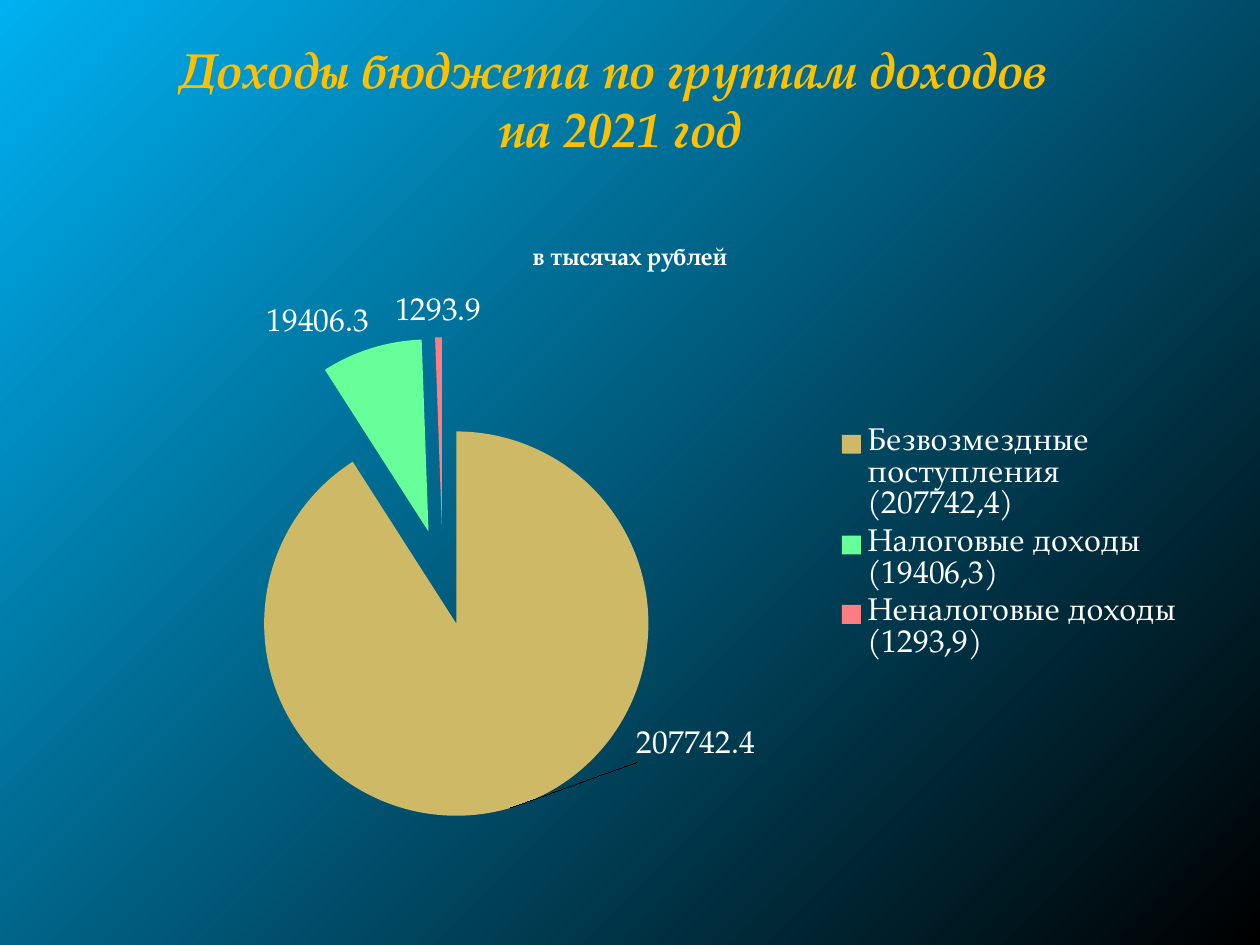
from lxml import etree
from pptx import Presentation
from pptx.chart.data import CategoryChartData
from pptx.dml.color import RGBColor
from pptx.enum.chart import XL_CHART_TYPE, XL_LABEL_POSITION, XL_LEGEND_POSITION
from pptx.enum.text import MSO_ANCHOR, MSO_AUTO_SIZE, PP_ALIGN
from pptx.oxml import parse_xml
from pptx.oxml.ns import qn
from pptx.util import Pt

FONT = "TeX Gyre Pagella"
CHART_NS = "http://schemas.openxmlformats.org/drawingml/2006/chart"


def color(hex_text):
    return RGBColor.from_string(hex_text)


def manual_layout(**settings):
    """Return a c:layout element; settings are given in schema order."""
    layout = etree.Element(qn("c:layout"), nsmap={"c": CHART_NS})
    manual = etree.SubElement(layout, qn("c:manualLayout"))
    for name, value in settings.items():
        etree.SubElement(manual, qn(f"c:{name}")).set("val", str(value))
    return parse_xml(etree.tostring(layout))


deck = Presentation()
deck.slide_width, deck.slide_height = Pt(720), Pt(540)
page = deck.slides.add_slide(deck.slide_layouts[5])

# Background: gradient spreading from the top left corner
background = page.background.fill
background.gradient()
for stop, shade in zip(background.gradient_stops, ("00B0F0", "000000")):
    stop.color.rgb = color(shade)
gradient = page.element.xpath(".//p:bg//a:gradFill")[0]
gradient.remove(gradient.find(qn("a:lin")))
spread = etree.SubElement(gradient, qn("a:path"), path="circle")
etree.SubElement(spread, qn("a:fillToRect"), r="100000", b="100000")

# Title: rounded box filled with the slide background
title = page.shapes.title
title.left, title.top, title.width, title.height = Pt(56.2), Pt(22.3), Pt(596.2), Pt(101.5)
outline = etree.Element(qn("a:prstGeom"), prst="roundRect")
etree.SubElement(outline, qn("a:avLst"))
title.element.xpath("./p:spPr/a:xfrm")[0].addnext(outline)
title.element.set("useBgFill", "1")
frame = title.text_frame
frame.word_wrap = True
frame.auto_size = MSO_AUTO_SIZE.NONE
frame.vertical_anchor = MSO_ANCHOR.MIDDLE
frame.margin_bottom = Pt(37)
for index, line in enumerate(("Доходы бюджета по группам доходов ", "на 2021 год")):
    para = frame.add_paragraph() if index else frame.paragraphs[0]
    para.alignment = PP_ALIGN.CENTER
    para.space_before = Pt(0)
    span = para.add_run()
    span.text = line
    span.font.name, span.font.size = FONT, Pt(28)
    span.font.bold = span.font.italic = True
    span.font.color.rgb = color("FFC000")

# Pie chart of income groups
incomes = [
    ("Безвозмездные поступления (207742,4)", 207742.4, "CEB966"),
    ("Налоговые доходы (19406,3)", 19406.3, "66FF99"),
    ("Неналоговые доходы (1293,9)", 1293.9, "FF7C80"),
]
data = CategoryChartData()
data.categories = [name for name, _, _ in incomes]
data.add_series("в тысячах рублей", [value for _, value, _ in incomes])
chart = page.shapes.add_chart(
    XL_CHART_TYPE.PIE, Pt(36), Pt(126), Pt(648), Pt(371), data
).chart
chart.font.name, chart.font.size = FONT, Pt(18)
chart.font.color.rgb = color("FFFFFF")

chart.has_title = True
span = chart.chart_title.text_frame.paragraphs[0].add_run()
span.text = "в тысячах рублей"
span.font.name, span.font.size, span.font.bold = FONT, Pt(14), True
span.font.color.rgb = color("FFFFFF")

chart.has_legend = True
chart.legend.position = XL_LEGEND_POSITION.RIGHT
chart.legend.include_in_layout = False

plot = chart.plots[0]
plot.vary_by_categories = True
series = plot.series[0]
for index, (_, _, shade) in enumerate(incomes):
    fill = series.points[index].format.fill
    fill.solid()
    fill.fore_color.rgb = color(shade)
labels = series.data_labels
labels.show_value = True
labels.position = XL_LABEL_POSITION.OUTSIDE_END

# Pulled-out slices, and the largest slice's label moved to the right
explosion = etree.Element(qn("c:explosion"), val="25")
chart.element.xpath(".//c:ser/c:tx")[0].addnext(explosion)
series.points[0].data_label.position = XL_LABEL_POSITION.OUTSIDE_END
label = chart.element.xpath(".//c:dLbl")[0]
label.find(qn("c:idx")).addnext(manual_layout(x=0.11, y=-0.13))

# Plot area placement
area = chart.element.xpath(".//c:plotArea")[0]
for old in area.findall(qn("c:layout")):
    area.remove(old)
area.insert(0, manual_layout(layoutTarget="inner", xMode="edge", yMode="edge",
                             x=0.12, y=0.18, w=0.43, h=0.74))

deck.save("out.pptx")
